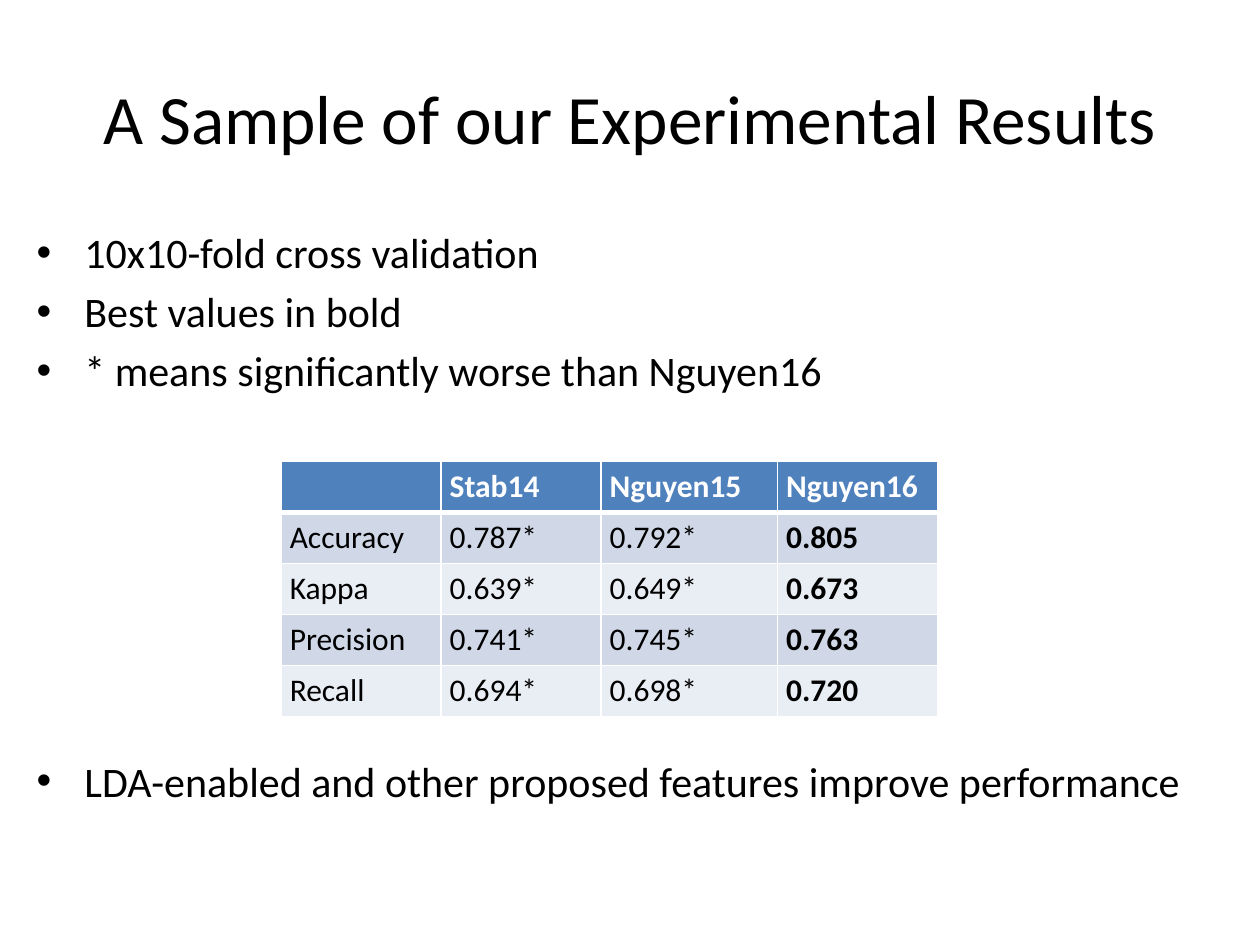
"""Build the slide of experimental results with its bullets and score table."""
from lxml.etree import SubElement
from pptx import Presentation
from pptx.dml.color import RGBColor
from pptx.enum.text import MSO_ANCHOR as Anchor, MSO_AUTO_SIZE as AutoSize, PP_ALIGN as Align
from pptx.oxml.ns import qn
from pptx.util import Inches, Pt


def style(paragraph, size, color, bold=False):
    for run in paragraph.runs:
        run.font.name = "Calibri"
        run.font.size = Pt(size)
        run.font.bold = bold
        run.font.color.rgb = RGBColor.from_string(color)


def add_border(cell, side, points, position):
    properties = cell._tc.get_or_add_tcPr()
    line = SubElement(properties, qn(f"a:{side}"), w=str(Pt(points)))
    SubElement(SubElement(line, qn("a:solidFill")), qn("a:srgbClr"), val="FFFFFF")
    properties.insert(position, line)


deck = Presentation()
deck.slide_width, deck.slide_height = Inches(10), Inches(7.5)
slide = deck.slides.add_slide(deck.slide_layouts[1])

title = slide.shapes.title
title.left, title.top, title.width, title.height = map(Inches, (0.5, 0.3, 9, 1.25))
title.text_frame.text = "A Sample of our Experimental Results"
title.text_frame.auto_size = AutoSize.NONE
title.text_frame.vertical_anchor = Anchor.MIDDLE
title.text_frame.paragraphs[0].alignment = Align.CENTER
style(title.text_frame.paragraphs[0], 39.6, "000000")

findings = slide.placeholders[1]
findings.left, findings.top, findings.width, findings.height = map(Inches, (0.19, 1.75, 9.57, 4.95))
findings.text_frame.text = "\n".join([
    "10x10-fold cross validation",
    "Best values in bold",
    "* means significantly worse than Nguyen16",
    "LDA-enabled and other proposed features improve performance",
])
findings.text_frame.auto_size = AutoSize.NONE
for finding in findings.text_frame.paragraphs:
    style(finding, 24, "000000")
    indents = finding._p.get_or_add_pPr()
    indents.set("marL", str(Inches(0.38)))
    indents.set("indent", str(Inches(-0.38)))
findings.text_frame.paragraphs[-1].space_before = Pt(206)

scores = [
    ["", "Stab14", "Nguyen15", "Nguyen16"],
    ["Accuracy", "0.787*", "0.792*", "0.805"],
    ["Kappa", "0.639*", "0.649*", "0.673"],
    ["Precision", "0.741*", "0.745*", "0.763"],
    ["Recall", "0.694*", "0.698*", "0.720"],
]
widths = [1.27, 1.27, 1.4, 1.27]
row_height = 0.4
table = slide.shapes.add_table(
    len(scores), len(widths), Inches(2.23), Inches(3.66),
    Inches(sum(widths)), Inches(row_height * len(scores))).table
for column, width in zip(table.columns, widths):
    column.width = Inches(width)

for r, row in enumerate(scores):
    header = r == 0
    fill = "4F81BD" if header else ("E9EDF4", "D0D8E8")[r % 2]
    for c, value in enumerate(row):
        cell = table.cell(r, c)
        cell.text_frame.text = value
        cell.margin_left = cell.margin_right = Inches(0.07)
        cell.margin_top = cell.margin_bottom = Inches(0.05)
        cell.fill.solid()
        cell.fill.fore_color.rgb = RGBColor.from_string(fill)
        style(cell.text_frame.paragraphs[0], 18, "FFFFFF" if header else "000000",
              header or c == len(row) - 1)
        for position, side in enumerate(("lnL", "lnR", "lnT", "lnB")):
            thick = (header and side == "lnB") or (r == 1 and side == "lnT")
            add_border(cell, side, 3 if thick else 1, position)

deck.save("out.pptx")
